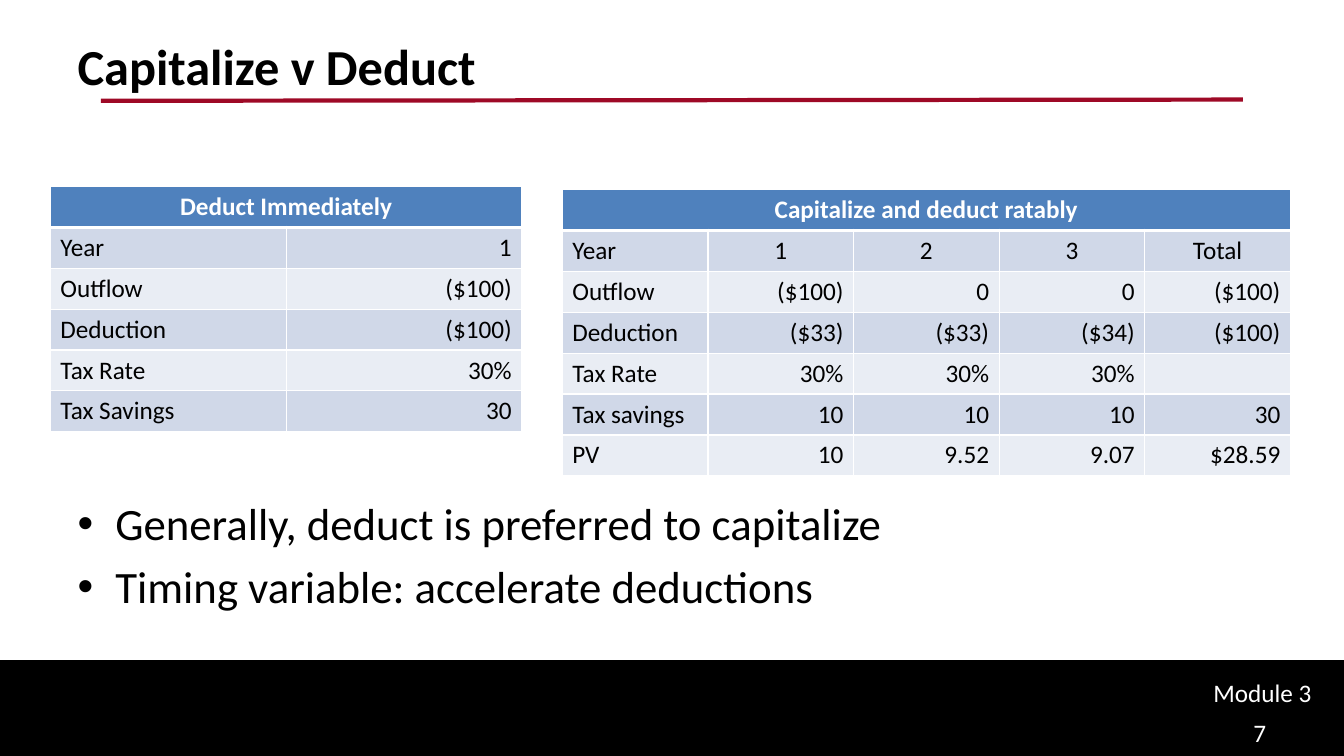
from lxml import etree
from pptx import Presentation
from pptx import util as u
from pptx.dml.color import RGBColor
from pptx.enum import shapes, text
from pptx.oxml.ns import qn

COLORS = {
    "black": "000000",
    "white": "FFFFFF",
    "rule": "9E0926",
    "header": "4F81BD",
    "band_dark": "D0D8E8",
    "band_light": "E9EDF4",
}
LEFT, CENTER, RIGHT = text.PP_ALIGN.LEFT, text.PP_ALIGN.CENTER, text.PP_ALIGN.RIGHT
ROW_HEIGHT = 1.03

DEDUCT_ROWS = [
    ["Year", "1"],
    ["Outflow", "($100)"],
    ["Deduction", "($100)"],
    ["Tax Rate", "30%"],
    ["Tax Savings", "30"],
]
CAPITALIZE_ROWS = [
    ["Year", "1", "2", "3", "Total"],
    ["Outflow", "($100)", "0", "0", "($100)"],
    ["Deduction", "($33)", "($33)", "($34)", "($100)"],
    ["Tax Rate", "30%", "30%", "30%", ""],
    ["Tax savings", "10", "10", "10", "30"],
    ["PV", "10", "9.52", "9.07", "$28.59"],
]


def rgb(color):
    return RGBColor.from_string(COLORS[color])


def write(paragraph, content, size=18, color="black", bold=False, align=LEFT, before=0):
    paragraph.alignment = align
    paragraph.space_before = u.Pt(before)
    run = paragraph.add_run()
    run.text = content
    run.font.name = "Calibri"
    run.font.size = u.Pt(size)
    run.font.bold = bold
    run.font.color.rgb = rgb(color)


def set_borders(cell, **widths):
    """Draw white borders; widths in points are keyed by side: L, R, T, B."""
    properties = cell._tc.get_or_add_tcPr()
    for side, width in widths.items():
        line = etree.SubElement(properties, qn(f"a:ln{side}"), w=str(u.Pt(width)))
        fill = etree.SubElement(line, qn("a:solidFill"))
        etree.SubElement(fill, qn("a:srgbClr"), val=COLORS["white"])


class SlideBuilder:
    def __init__(self, slide):
        self.slide = slide

    def place(self, shape, left, top, width, height):
        shape.left, shape.top = u.Cm(left), u.Cm(top)
        shape.width, shape.height = u.Cm(width), u.Cm(height)
        shape.text_frame.vertical_anchor = text.MSO_ANCHOR.TOP
        shape.text_frame.auto_size = text.MSO_AUTO_SIZE.NONE

    def title(self, content, *box):
        shape = self.slide.shapes.title
        self.place(shape, *box)
        write(shape.text_frame.paragraphs[0], content, size=36, bold=True)

    def bullets(self, items, *box):
        shape = self.slide.placeholders[1]
        self.place(shape, *box)
        frame = shape.text_frame
        for index, item in enumerate(items):
            paragraph = frame.add_paragraph() if index else frame.paragraphs[0]
            write(paragraph, item, size=32, before=6.4 if index else 0)

    def label(self, content, left, top, width, height):
        box = self.slide.shapes.add_textbox(u.Cm(left), u.Cm(top), u.Cm(width), u.Cm(height))
        box.text_frame.word_wrap = True
        write(box.text_frame.paragraphs[0], content, color="white")

    def band(self, left, top, width, height):
        shape = self.slide.shapes.add_shape(
            shapes.MSO_SHAPE.RECTANGLE, u.Cm(left), u.Cm(top), u.Cm(width), u.Cm(height))
        shape.shadow.inherit = False
        shape.fill.solid()
        shape.fill.fore_color.rgb = rgb("black")
        shape.line.color.rgb = rgb("black")
        shape.line.width = u.Pt(2)

    def rule(self, *ends):
        connector = self.slide.shapes.add_connector(
            shapes.MSO_CONNECTOR.STRAIGHT, *(u.Cm(value) for value in ends))
        connector.line.color.rgb = rgb("rule")
        connector.line.width = u.Pt(3)
        etree.SubElement(connector._element.spPr, qn("a:effectLst"))

    def cell(self, cell, content, fill, top=1, bottom=1, **style):
        set_borders(cell, L=1, R=1, T=top, B=bottom)
        cell.fill.solid()
        cell.fill.fore_color.rgb = rgb(fill)
        if content:
            write(cell.text_frame.paragraphs[0], content, **style)

    def table(self, heading, rows, left, top, column_width, year_align):
        """Build a table with a merged heading; year_align aligns the first row's values."""
        columns = len(rows[0])
        table = self.slide.shapes.add_table(
            len(rows) + 1, columns, u.Cm(left), u.Cm(top),
            u.Cm(column_width * columns), u.Cm(ROW_HEIGHT * (len(rows) + 1))).table
        table.first_row = table.horz_banding = False
        for column in table.columns:
            column.width = u.Cm(column_width)
        for row in table.rows:
            row.height = u.Cm(ROW_HEIGHT)
        table.cell(0, 0).merge(table.cell(0, columns - 1))
        for c in range(columns):
            self.cell(table.cell(0, c), "" if c else heading, "header", bottom=3,
                      color="white", bold=True, align=CENTER)
        for r, values in enumerate(rows, start=1):
            fill = "band_dark" if r % 2 else "band_light"
            value_align = year_align if r == 1 else RIGHT
            for c, value in enumerate(values):
                self.cell(table.cell(r, c), value, fill, top=3 if r == 1 else 1,
                          align=value_align if c else LEFT)


def main():
    presentation = Presentation()
    presentation.slide_width, presentation.slide_height = u.Cm(33.87), u.Cm(19.05)
    builder = SlideBuilder(presentation.slides.add_slide(presentation.slide_layouts[1]))
    builder.band(0, 16.66, 33.87, 2.39)
    builder.rule(2.54, 2.54, 31.32, 2.51)
    builder.title("Capitalize v Deduct", 1.7, 0.76, 30.48, 3.18)
    builder.bullets(["Generally, deduct is preferred to capitalize",
                     "Timing variable: accelerate deductions"], 1.7, 12.37, 30.48, 3.3)
    builder.label("Module 3", 30.33, 16.94, 3.35, 1.02)
    builder.label("7", 31.34, 17.96, 2.31, 1.09)
    builder.table("Deduct Immediately", DEDUCT_ROWS, 1.27, 4.7, 5.94, RIGHT)
    builder.table("Capitalize and deduct ratably", CAPITALIZE_ROWS, 14.17, 4.78, 3.67, CENTER)
    presentation.save("out.pptx")


if __name__ == "__main__":
    main()
